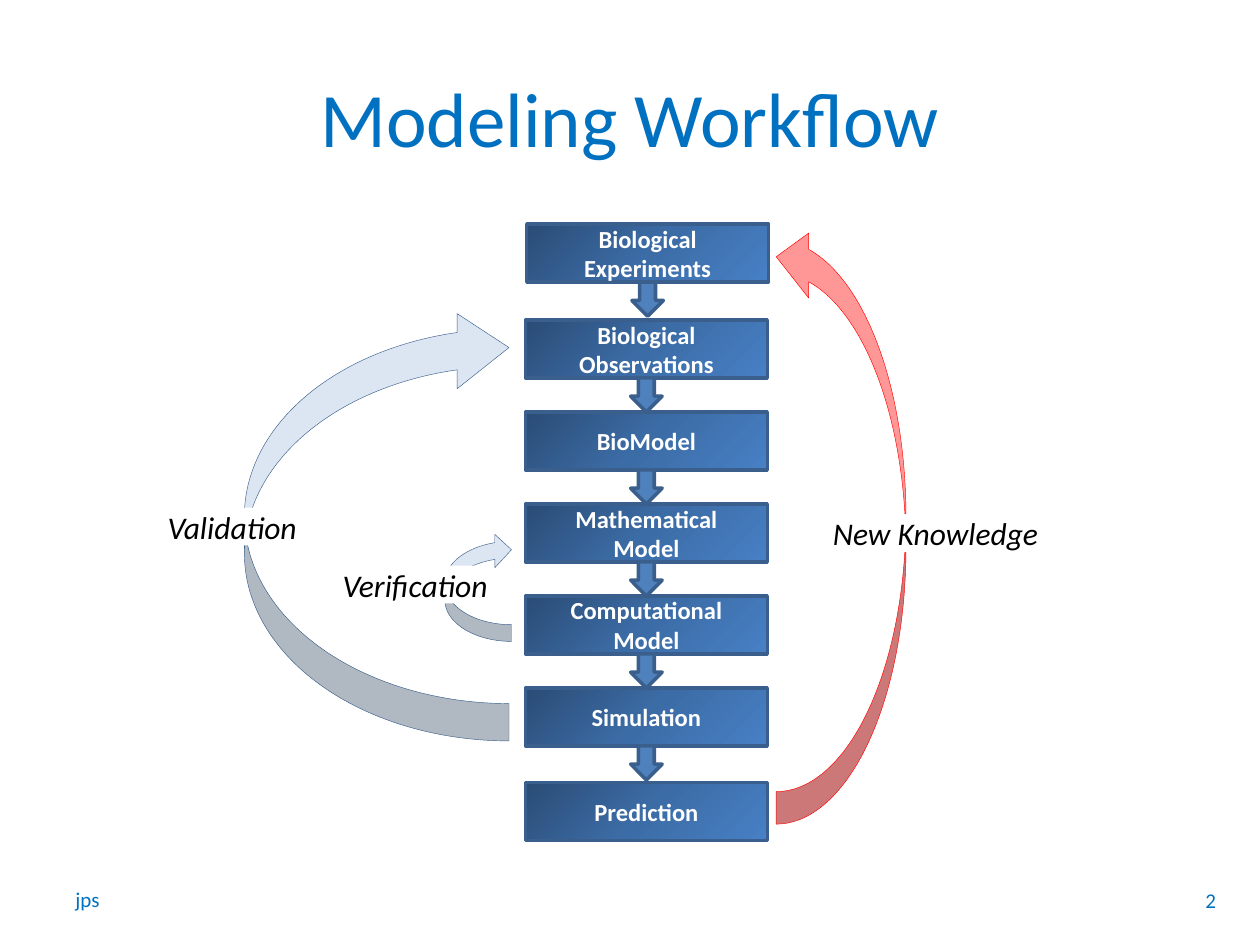
from copy import deepcopy

from pptx import Presentation
from pptx.dml.color import RGBColor
from pptx.enum.shapes import MSO_SHAPE
from pptx.enum.text import MSO_ANCHOR, PP_ALIGN
from pptx.oxml.ns import qn
from pptx.util import Inches, Pt

RECT = MSO_SHAPE.RECTANGLE
DOWN_ARROW = MSO_SHAPE.DOWN_ARROW
CURVED_ARROW = MSO_SHAPE.CURVED_RIGHT_ARROW
LEFT, CENTER, RIGHT = PP_ALIGN.LEFT, PP_ALIGN.CENTER, PP_ALIGN.RIGHT
TOP, MIDDLE = MSO_ANCHOR.TOP, MSO_ANCHOR.MIDDLE

FONT = "Calibri"
BLUE = RGBColor(0x00, 0x70, 0xC0)
WHITE = RGBColor(0xFF, 0xFF, 0xFF)
BLACK = RGBColor(0x00, 0x00, 0x00)
EDGE = RGBColor(0x3A, 0x5F, 0x8C)
ARROW_BLUE = RGBColor(0x4F, 0x81, 0xBD)
PALE_BLUE = RGBColor(0xDC, 0xE6, 0xF2)
PINK = RGBColor(0xFF, 0x97, 0x97)
RED = RGBColor(0xFF, 0x00, 0x00)
STEP_GRADIENT = [
    (0, RGBColor(0x2A, 0x4C, 0x75)),
    (0.5, RGBColor(0x3C, 0x6C, 0xA6)),
    (1, RGBColor(0x47, 0x80, 0xC5)),
]

STEP_W, STEP_H = 1.92, 0.46
ARROW_W, ARROW_H = 0.25, 0.27
# label lines, left and top of each step
STEPS = [
    (["Biological", "Experiments"], 4.18, 1.78),
    (["Biological", "Observations"], 4.17, 2.54),
    (["BioModel"], 4.17, 3.27),
    (["Mathematical", "Model"], 4.17, 4.0),
    (["Computational", "Model"], 4.17, 4.73),
    (["Simulation"], 4.17, 5.46),
    (["Prediction"], 4.17, 6.21),
]


def write(tf, lines, size, color, align=LEFT, anchor=TOP, bold=False, italic=False):
    tf.vertical_anchor = anchor
    p = tf.paragraphs[0]
    p.alignment = align
    for i, line in enumerate(lines):
        if i:
            p.add_line_break()
        r = p.add_run()
        r.text = line
        r.font.name = FONT
        r.font.size = Pt(size)
        r.font.bold = bold
        r.font.italic = italic
        r.font.color.rgb = color


def add_text(slide, box, text, size, align, anchor=MIDDLE, wrap=True):
    tf = slide.shapes.add_textbox(*map(Inches, box)).text_frame
    tf.word_wrap = wrap
    write(tf, [text], size, BLUE, align, anchor)


def add_shape(slide, kind, box, fill=None, line=None, width=2):
    s = slide.shapes.add_shape(kind, *map(Inches, box))
    s.shadow.inherit = False
    if fill is not None:
        s.fill.solid()
        s.fill.fore_color.rgb = fill
    if line is None:
        s.line.fill.background()
    else:
        s.line.color.rgb = line
        s.line.width = Pt(width)
    return s


def fill_gradient(s):
    """Diagonal three-stop gradient, dark at the top left."""
    s.fill.gradient()
    s.fill.gradient_angle = 315
    stops = s._element.spPr.find(qn("a:gradFill")).find(qn("a:gsLst"))
    stops.append(deepcopy(stops[0]))
    for stop, (position, color) in zip(s.fill.gradient_stops, STEP_GRADIENT):
        stop.position = position
        stop.color.rgb = color


def add_steps(slide):
    for lines, left, top in STEPS:
        s = add_shape(slide, RECT, (left, top, STEP_W, STEP_H), line=EDGE)
        fill_gradient(s)
        s.text_frame.word_wrap = True
        write(s.text_frame, lines, 14, WHITE, CENTER, MIDDLE, bold=True)
    for _, left, top in STEPS[:-1]:
        box = (left + (STEP_W - ARROW_W) / 2, top + STEP_H, ARROW_W, ARROW_H)
        add_shape(slide, DOWN_ARROW, box, ARROW_BLUE, EDGE)


def add_feedback_arrow(slide, box, fill, line, mirrored=False, adjustments=()):
    """Curved arrow pointing back up; mirrored puts it left of the steps."""
    s = add_shape(slide, CURVED_ARROW, box, fill, line, 0.25)
    s.rotation = 180
    if mirrored:
        s._element.spPr.xfrm.set("flipH", "1")
    for i, value in enumerate(adjustments):
        s.adjustments[i] = value


def add_feedback_label(slide, box, text):
    tf = add_shape(slide, RECT, box, WHITE).text_frame
    tf.margin_left = tf.margin_right = tf.margin_top = tf.margin_bottom = 0
    tf.word_wrap = False
    write(tf, [text], 18, BLACK, italic=True)


def add_feedback(slide):
    add_feedback_arrow(slide, (3.53, 4.23, 0.53, 0.86), PALE_BLUE, EDGE, True)
    add_feedback_arrow(slide, (1.94, 2.46, 2.1, 3.42), PALE_BLUE, EDGE, True,
                       (0.141, 0.284, 0.196))
    add_feedback_arrow(slide, (6.16, 1.78, 1.03, 4.76), PINK, RED)
    add_feedback_label(slide, (2.72, 4.49, 1.17, 0.3), "Verification")
    add_feedback_label(slide, (1.33, 4.03, 1.04, 0.3), "Validation")
    add_feedback_label(slide, (6.61, 4.08, 1.65, 0.3), "New Knowledge")


def main():
    prs = Presentation()
    prs.slide_width, prs.slide_height = Inches(10), Inches(7.5)
    slide = prs.slides.add_slide(prs.slide_layouts[6])
    add_text(slide, (0.5, 6.99, 0.4, 0.3), "jps", 12, LEFT, TOP, wrap=False)
    add_text(slide, (0.5, 0.3, 9, 1.25), "Modeling Workflow", 44, CENTER)
    add_text(slide, (9.17, 6.95, 0.58, 0.38), "2", 12, RIGHT)
    add_feedback(slide)
    add_steps(slide)
    prs.save("out.pptx")


if __name__ == "__main__":
    main()
